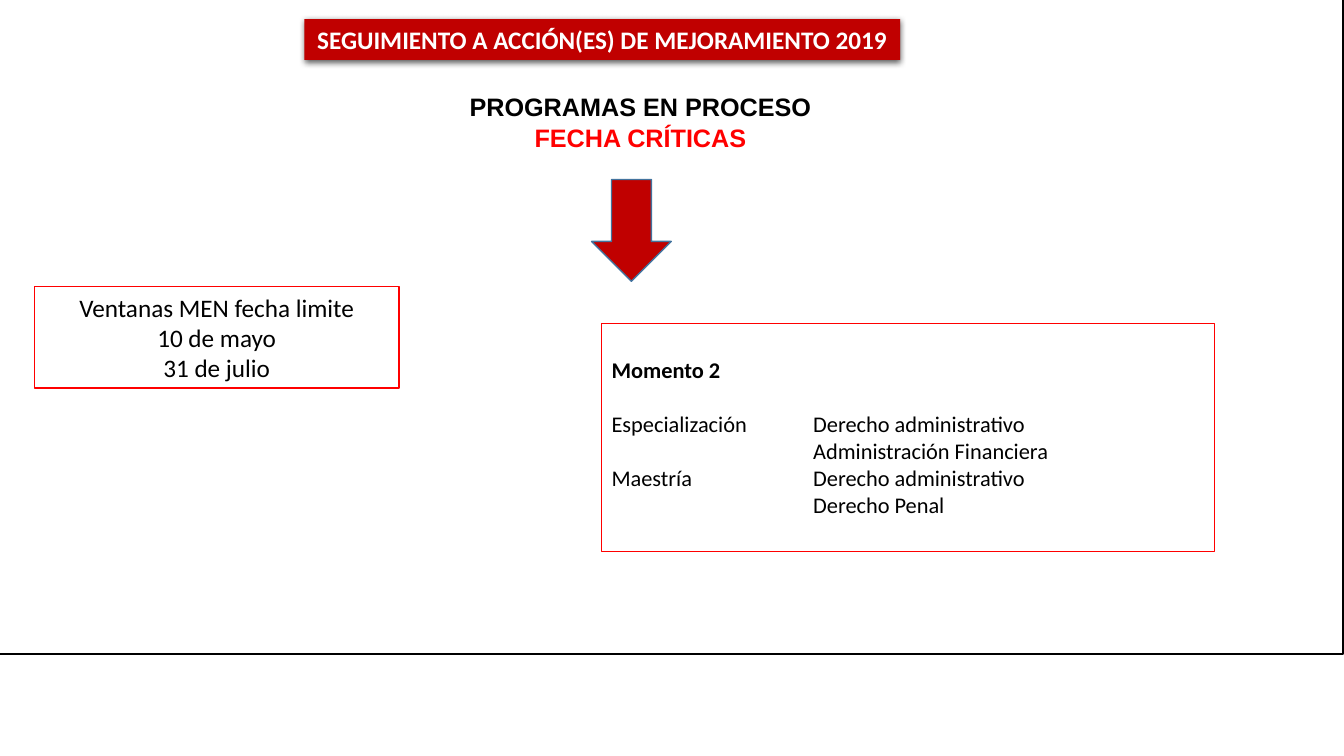
import pptx
import pptx.util
import pptx.dml.color
import pptx.enum.shapes
import pptx.enum.text
import pptx.oxml
import pptx.oxml.ns

Pt = pptx.util.Pt
SHAPE = pptx.enum.shapes.MSO_SHAPE
ANCHOR = pptx.enum.text.MSO_ANCHOR
ALIGN = pptx.enum.text.PP_ALIGN
NAMESPACE = pptx.oxml.ns.nsdecls("a")


def color(value):
    return pptx.dml.color.RGBColor.from_string(value)


def write(shape, lines, font_name, size, alignment, anchor=ANCHOR.MIDDLE):
    """Fill a shape with (text, colour, bold) lines."""
    frame = shape.text_frame
    frame.word_wrap = True
    frame.auto_size = pptx.enum.text.MSO_AUTO_SIZE.NONE
    frame.vertical_anchor = anchor
    frame.text = "\n".join(text for text, _, _ in lines)
    for paragraph, (_, font_color, bold) in zip(frame.paragraphs, lines):
        paragraph.alignment = alignment
        paragraph.line_spacing = 1.0
        for run in paragraph.runs:
            run.font.name = font_name
            run.font.size = Pt(size)
            run.font.bold = bold
            run.font.color.rgb = color(font_color)


presentation = pptx.Presentation()
presentation.slide_width = Pt(960)
presentation.slide_height = Pt(540)
slide = presentation.slides.add_slide(presentation.slide_layouts[5])

# Title bar
title = slide.shapes.title
title.left, title.top, title.width, title.height = Pt(217.4), Pt(13.7), Pt(425.5), Pt(29.1)
title.fill.solid()
title.fill.fore_color.rgb = color("C00000")
write(title, [("SEGUIMIENTO A ACCIÓN(ES) DE MEJORAMIENTO 2019", "FFFFFF", True)],
      "Calibri", 18, ALIGN.CENTER)
title.text_frame.word_wrap = False
title.element.spPr.append(pptx.oxml.parse_xml(
    f'<a:effectLst {NAMESPACE}><a:outerShdw blurRad="57150" dist="19050" dir="5400000" '
    'algn="ctr" rotWithShape="0"><a:srgbClr val="000000"><a:alpha val="63000"/>'
    '</a:srgbClr></a:outerShdw></a:effectLst>'))

# Heading
heading = slide.shapes.add_textbox(Pt(217.4), Pt(61.9), Pt(480.2), Pt(72.7))
write(heading, [("PROGRAMAS EN PROCESO", "000000", True), ("FECHA CRÍTICAS", "FF0000", True)],
      "Arial", 18, ALIGN.CENTER, ANCHOR.TOP)

# Frame, boxes and arrow
panels = {}
for name, preset, left, top, width, height, fill, line in [
    ("frame", SHAPE.RECTANGLE, -0.7, -4.3, 960, 471.6, "FFFFFF", "000000"),
    ("programs", SHAPE.RECTANGLE, 429.8, 231.1, 437.8, 162.7, "FFFFFF", "FF0000"),
    ("arrow", SHAPE.DOWN_ARROW, 422.6, 128.2, 56.9, 72.7, "C00000", "43739E"),
    ("deadlines", SHAPE.RECTANGLE, 24.5, 204.5, 260.6, 72.7, "FFFFFF", "FF0000"),
]:
    panel = slide.shapes.add_shape(preset, Pt(left), Pt(top), Pt(width), Pt(height))
    panel.shadow.inherit = False
    panel.fill.solid()
    panel.fill.fore_color.rgb = color(fill)
    panel.line.color.rgb = color(line)
    panel.line.width = Pt(1)
    panels[name] = panel
title.element.addprevious(panels["frame"].element)

write(panels["deadlines"],
      [(text, "000000", False)
       for text in ("Ventanas MEN fecha limite", "10 de mayo", "31 de julio")],
      "Calibri", 18, ALIGN.CENTER)

# Programs of the second moment, in two tabbed columns
programs = panels["programs"]
program_lines = ["Momento 2",
                 "Especialización\tDerecho administrativo",
                 "\tAdministración Financiera",
                 "Maestría\tDerecho administrativo",
                 "\tDerecho Penal"]
write(programs, [(text, "000000", text == "Momento 2") for text in program_lines],
      "Calibri", 16, ALIGN.LEFT, ANCHOR.TOP)
programs.text_frame.margin_top = Pt(23.1)
programs.text_frame.paragraphs[1].space_before = Pt(19.5)
for paragraph in programs.text_frame.paragraphs[1:]:
    properties = paragraph._p.get_or_add_pPr()
    properties.append(pptx.oxml.parse_xml(
        f'<a:tabLst {NAMESPACE}><a:tab pos="{Pt(144)}" algn="l"/></a:tabLst>'))

presentation.save("out.pptx")
